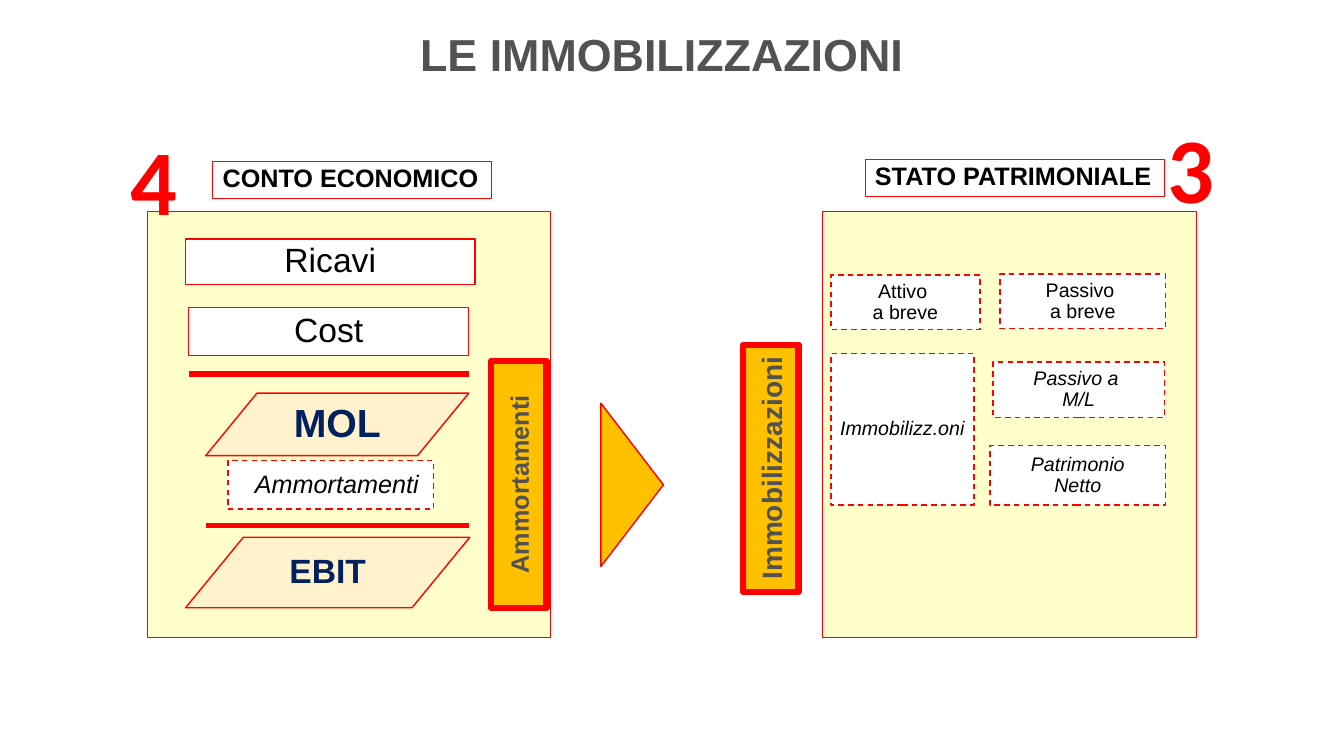
import pptx
import pptx.dml.color
import pptx.enum.dml
import pptx.enum.shapes
import pptx.enum.text
import pptx.util
from pptx.util import Inches

COLORS = {
    "red": "FF0000", "cream": "FFFFCC", "sand": "FFF2CC", "amber": "FFC000",
    "white": "FFFFFF", "black": "000000", "navy": "002060", "gray": "525252",
}
PANELS = [(1.46, 2.1, 4, 4.23), (8.16, 2.1, 3.71, 4.23)]
HEADINGS = [
    ("CONTO ECONOMICO", (2.11, 1.6, 2.77, 0.37)),
    ("STATO PATRIMONIALE", (8.58, 1.58, 2.97, 0.37)),
]
INCOME_ROWS = [("Ricavi", (1.84, 2.37, 2.87, 0.45)), ("Cost", (1.87, 3.05, 2.78, 0.48))]
MARGINS = [("MOL", 28, (2.04, 3.9, 2.61, 0.62)), ("EBIT", 24, (1.84, 5.33, 2.82, 0.7))]
RULES = [(1.87, 3.71), (2.04, 5.21)]
RULE_END = 4.65
DEPRECIATION_FRAME = (2.26, 4.57, 2.04, 0.48)
DEPRECIATION = ("Ammortamenti", (2.43, 4.63, 1.84, 0.37))
BALANCE_ITEMS = [
    (["Attivo ", "a breve"], False, (8.24, 2.73, 1.48, 0.54)),
    (["Passivo ", "a breve"], False, (9.92, 2.72, 1.64, 0.54)),
    (["Passivo a ", "M/L"], True, (9.85, 3.59, 1.7, 0.55)),
    (["Patrimonio", "Netto"], True, (9.82, 4.42, 1.74, 0.59)),
    (["Immobilizz.oni"], True, (8.24, 3.51, 1.42, 1.5)),
]
VERTICAL_LABELS = [
    ("Ammortamenti", 18, (3.92, 4.53, 2.45, 0.55)),
    ("Immobilizzazioni", 20, (6.42, 4.37, 2.45, 0.55)),
]
POINTER = (5.46, 4.5, 1.62, 0.62)
TITLE = ("LE IMMOBILIZZAZIONI", (4.15, 0.27, 4.83, 0.54))
NUMBERS = [("3", (11.48, 1.05, 0.67, 1.21)), ("4", (1.2, 1.17, 0.67, 1.21))]

SHAPES = pptx.enum.shapes.MSO_SHAPE
ALIGN = pptx.enum.text.PP_ALIGN
ANCHOR = pptx.enum.text.MSO_ANCHOR

presentation = pptx.Presentation()
presentation.slide_width = Inches(13.33)
presentation.slide_height = Inches(7.5)
slide = presentation.slides.add_slide(presentation.slide_layouts[6])


def rgb(name):
    return pptx.dml.color.RGBColor.from_string(COLORS[name])


def add_box(place, fill=None, width=1.0, dashed=False, kind=SHAPES.RECTANGLE, rotation=0):
    shape = slide.shapes.add_shape(kind, *map(Inches, place))
    shape.shadow.inherit = False
    shape.rotation = rotation
    if fill:
        shape.fill.solid()
        shape.fill.fore_color.rgb = rgb(fill)
    else:
        shape.fill.background()
    shape.line.color.rgb = rgb("red")
    shape.line.width = pptx.util.Pt(width)
    if dashed:
        shape.line.dash_style = pptx.enum.dml.MSO_LINE.DASH
    return shape


def add_text(shape, lines, size, color="black", bold=False, italic=False, font="Arial",
             align=ALIGN.CENTER, anchor=ANCHOR.MIDDLE, spacing=0.9, insets=(0.1, 0.05),
             wrap=False, grow=False):
    frame = shape.text_frame
    frame.word_wrap = wrap
    frame.vertical_anchor = anchor
    frame.margin_left = frame.margin_right = Inches(insets[0])
    frame.margin_top = frame.margin_bottom = Inches(insets[1])
    if grow:
        frame.auto_size = pptx.enum.text.MSO_AUTO_SIZE.SHAPE_TO_FIT_TEXT
    for index, line in enumerate(lines):
        paragraph = frame.add_paragraph() if index else frame.paragraphs[0]
        paragraph.alignment = align
        paragraph.line_spacing = spacing
        run = paragraph.add_run()
        run.text = line
        run.font.name = font
        run.font.size = pptx.util.Pt(size)
        run.font.bold = bold
        run.font.italic = italic
        run.font.color.rgb = rgb(color)


def add_label(text, place, size, **style):
    label = slide.shapes.add_textbox(*map(Inches, place))
    add_text(label, [text], size, anchor=ANCHOR.TOP, grow=True, **style)


def add_rule(left, top):
    rule = slide.shapes.add_connector(
        pptx.enum.shapes.MSO_CONNECTOR.STRAIGHT,
        Inches(left), Inches(top), Inches(RULE_END), Inches(top))
    rule.line.color.rgb = rgb("red")
    rule.line.width = pptx.util.Pt(3.75)
    properties = rule._element.spPr
    properties.append(properties.makeelement(pptx.oxml.ns.qn("a:effectLst"), {}))


for place in PANELS:
    add_box(place, "cream", 0.75)

for text, place in HEADINGS:
    add_text(add_box(place, width=0.75), [text], 18, bold=True,
             align=ALIGN.LEFT, anchor=ANCHOR.TOP, grow=True)

for text, place in INCOME_ROWS:
    add_text(add_box(place, "white"), [text], 24)

for text, size, place in MARGINS:
    margin = add_box(place, "sand", kind=SHAPES.PARALLELOGRAM)
    margin.adjustments[0] = 0.82
    add_text(margin, [text], size, "navy", bold=True, insets=(0.08, 0), wrap=True)

for left, top in RULES:
    add_rule(left, top)

add_box(DEPRECIATION_FRAME, "white", dashed=True)
add_label(*DEPRECIATION, 18, italic=True, align=ALIGN.LEFT)

for lines, italic, place in BALANCE_ITEMS:
    add_text(add_box(place, "white", dashed=True), lines, 14, italic=italic)

for text, size, place in VERTICAL_LABELS:
    add_text(add_box(place, "amber", 4.5, rotation=270), [text], size, "gray",
             bold=True, spacing=1.0, wrap=True)

add_box(POINTER, "amber", kind=SHAPES.ISOSCELES_TRIANGLE, rotation=90)
add_label(*TITLE, 32, color="gray", bold=True, spacing=1.0, insets=(0, 0))

for text, place in NUMBERS:
    add_label(text, place, 66, color="red", bold=True, font="Calibri",
              align=ALIGN.LEFT, spacing=1.0)

presentation.save("out.pptx")
